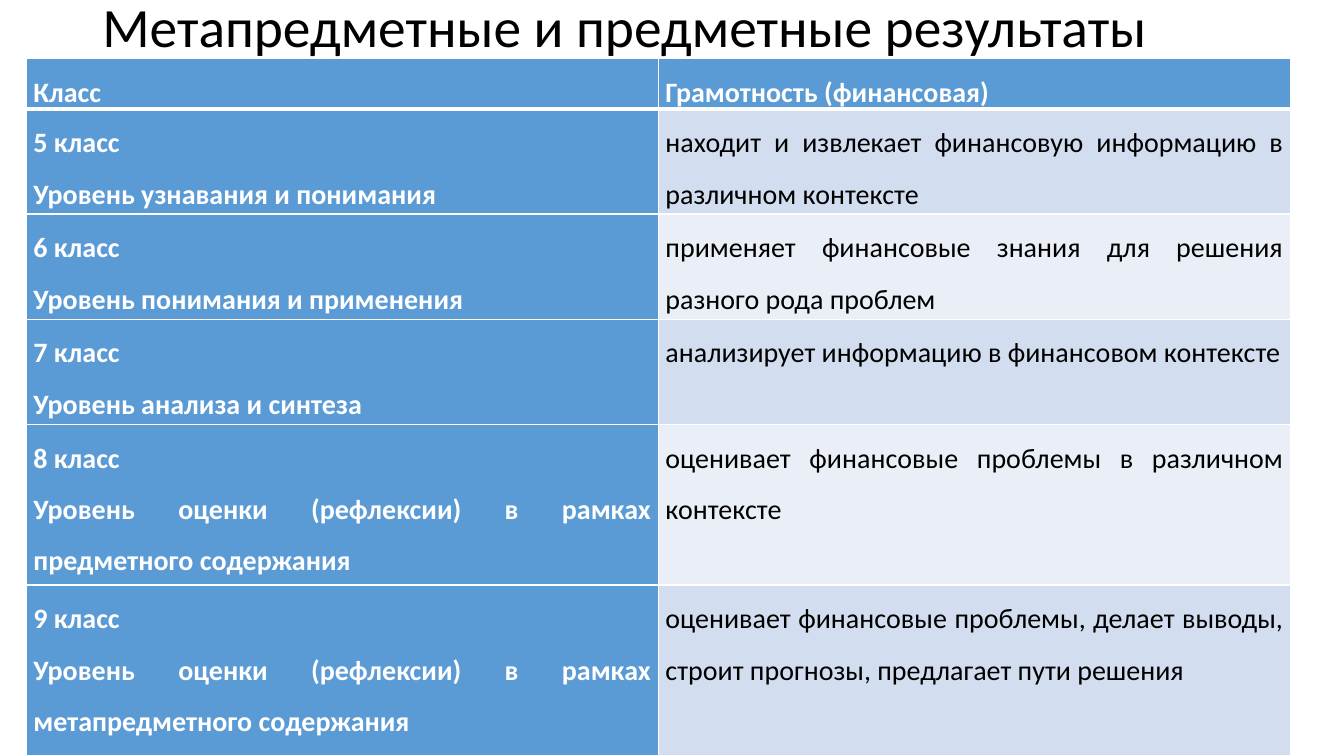
from lxml.etree import SubElement
from pptx import Presentation
from pptx.dml.color import RGBColor
from pptx.enum.text import MSO_ANCHOR, PP_ALIGN
from pptx.oxml.ns import qn
from pptx.util import Cm, Pt

BLACK = RGBColor(0x00, 0x00, 0x00)
WHITE = RGBColor(0xFF, 0xFF, 0xFF)
BLUE = RGBColor(0x5B, 0x9B, 0xD5)
BAND_DARK = RGBColor(0xD2, 0xDE, 0xEF)
BAND_LIGHT = RGBColor(0xEA, 0xEF, 0xF7)

TITLE = "Метапредметные и предметные результаты"
HEADER = ("Класс", "Грамотность (финансовая)")
GRADES = [
    ("5 класс\nУровень узнавания и понимания",
     "находит и извлекает финансовую информацию в различном контексте"),
    ("6 класс\nУровень понимания и применения",
     "применяет финансовые знания для решения разного рода проблем"),
    ("7 класс\nУровень анализа и синтеза",
     "анализирует информацию в финансовом контексте"),
    ("8 класс\nУровень оценки (рефлексии) в рамках предметного содержания",
     "оценивает финансовые проблемы в различном контексте"),
    ("9 класс\nУровень оценки (рефлексии) в рамках метапредметного содержания",
     "оценивает финансовые проблемы, делает выводы, строит прогнозы, "
     "предлагает пути решения"),
]
ROW_HEIGHTS = [1.25, 2.65, 2.65, 2.65, 4.05, 4.3]
COLUMN_WIDTH = 15.93


def write(frame, text, *, size, color=BLACK, bold=False, align=PP_ALIGN.LEFT,
          spacing=1.0, font="Calibri"):
    """Fill a text frame, one paragraph per line of text."""
    frame.word_wrap = True
    for index, line in enumerate(text.split("\n")):
        paragraph = frame.add_paragraph() if index else frame.paragraphs[0]
        paragraph.alignment = align
        paragraph.line_spacing = spacing
        run = paragraph.add_run()
        run.text = line
        run.font.name = font
        run.font.size = Pt(size)
        run.font.bold = bold
        run.font.color.rgb = color


def set_borders(cell, top=1, bottom=1):
    """Draw white borders; widths in points. Must precede the cell fill."""
    properties = cell._tc.get_or_add_tcPr()
    for side, width in (("L", 1), ("R", 1), ("T", top), ("B", bottom)):
        line = SubElement(properties, qn(f"a:ln{side}"), w=str(Pt(width)))
        fill = SubElement(line, qn("a:solidFill"))
        SubElement(fill, qn("a:srgbClr"), val=str(WHITE))


class ResultsSlide:
    def __init__(self, presentation):
        self.slide = presentation.slides.add_slide(presentation.slide_layouts[6])

    def title(self, text):
        box = self.slide.shapes.add_textbox(Cm(2.33), Cm(0), Cm(29.21), Cm(1.47))
        box.text_frame.vertical_anchor = MSO_ANCHOR.TOP
        box.text_frame.margin_top = box.text_frame.margin_bottom = 0
        write(box.text_frame, text, size=39.6, spacing=0.9)

    def table(self, rows):
        table = self.slide.shapes.add_table(
            len(rows), 2, Cm(0.66), Cm(1.47),
            Cm(2 * COLUMN_WIDTH), Cm(sum(ROW_HEIGHTS))).table
        for column in table.columns:
            column.width = Cm(COLUMN_WIDTH)
        for r, texts in enumerate(rows):
            table.rows[r].height = Cm(ROW_HEIGHTS[r])
            for c, text in enumerate(texts):
                self.cell(table.cell(r, c), text, r, c)

    def cell(self, cell, text, row, column):
        heading = row == 0 or column == 0
        band = BAND_DARK if row % 2 else BAND_LIGHT
        set_borders(cell, top=3 if row == 1 else 1, bottom=3 if row == 0 else 1)
        cell.fill.solid()
        cell.fill.fore_color.rgb = BLUE if heading else band
        cell.margin_left = cell.margin_right = Cm(0.18)
        cell.margin_top = cell.margin_bottom = 0
        write(cell.text_frame, text, size=20, bold=heading,
              color=WHITE if heading else BLACK,
              align=PP_ALIGN.JUSTIFY, spacing=1.5)


def main():
    presentation = Presentation()
    presentation.slide_width = Cm(33.87)
    presentation.slide_height = Cm(19.05)
    results = ResultsSlide(presentation)
    results.title(TITLE)
    results.table([HEADER, *GRADES])
    presentation.save("out.pptx")


if __name__ == "__main__":
    main()
